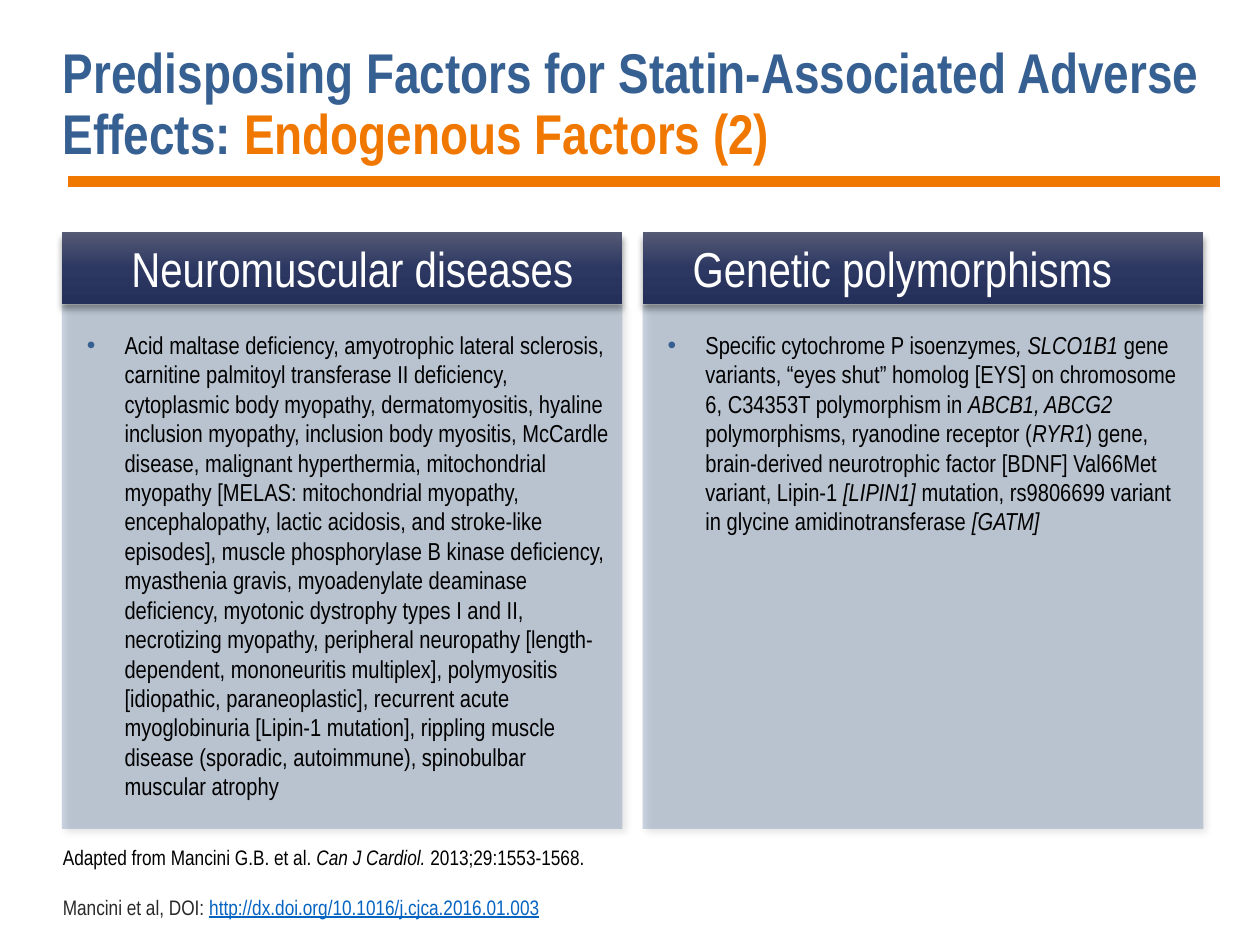
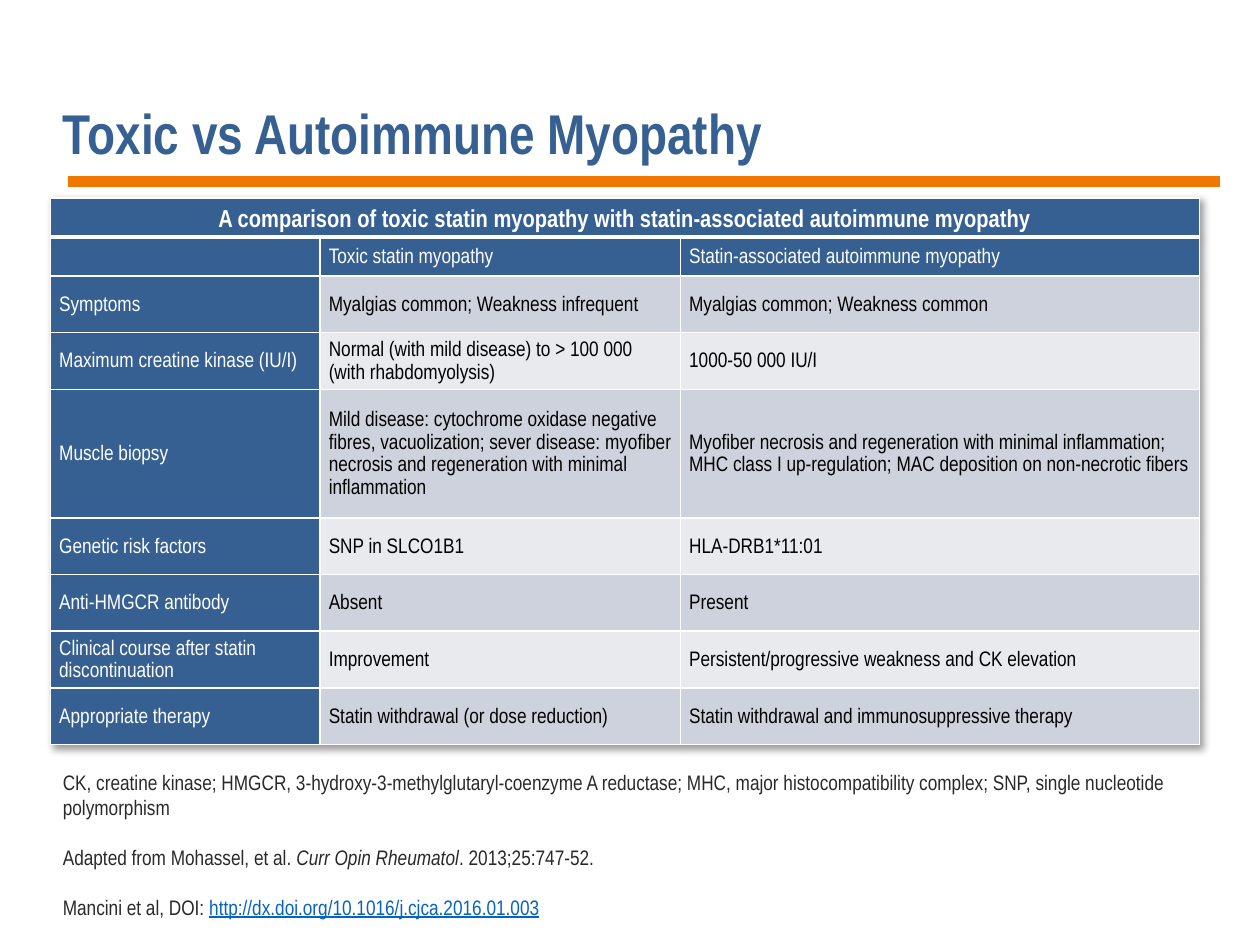
from lxml.etree import SubElement
from pptx import Presentation
from pptx.dml.color import RGBColor
from pptx.enum.shapes import MSO_CONNECTOR, MSO_SHAPE
from pptx.enum.text import MSO_ANCHOR as ANCHOR, MSO_AUTO_SIZE as AUTO_SIZE, PP_ALIGN as ALIGN
from pptx.oxml.ns import qn
from pptx.util import Inches, Pt

FONT = "Arial Narrow"
COLORS = {
    "blue": "376092", "orange": "F17800", "black": "000000", "white": "FFFFFF",
    "gray": "282928", "link": "0563C1", "band_dark": "CED2DC", "band_light": "E8EAEE",
}
HEADER_STOPS = {0: "555A75", 50: "2D3862", 100: "25305A"}
TITLE = {"size": 32, "bold": True, "color": "blue"}
NOTE = {"size": 12, "color": "gray"}
BODY = {"size": 14, "color": "black"}
HEADING = {"size": 28, "color": "white"}
ITALIC = {"italic": True}
DOI_LINE = [("Mancini et al, DOI: ", {}),
            ("http://dx.doi.org/10.1016/j.cjca.2016.01.003",
             {"color": "link", "underline": True})]

COLUMN_SIZE = 4.45, 4.74
COLUMN_TOP = 1.84
HEADER_HEIGHT = 0.57
DISEASES = [(
    "Acid maltase deficiency, amyotrophic lateral sclerosis, carnitine palmitoyl transferase II "
    "deficiency, cytoplasmic body myopathy, dermatomyositis, hyaline inclusion myopathy, "
    "inclusion body myositis, McCardle disease, malignant hyperthermia, mitochondrial myopathy "
    "[MELAS: mitochondrial myopathy, encephalopathy, lactic acidosis, and stroke-like episodes], "
    "muscle phosphorylase B kinase deficiency, myasthenia gravis, myoadenylate deaminase "
    "deficiency, myotonic dystrophy types I and II, necrotizing myopathy, peripheral neuropathy "
    "[length-dependent, mononeuritis multiplex], polymyositis [idiopathic, paraneoplastic], "
    "recurrent acute myoglobinuria [Lipin-1 mutation], rippling muscle disease (sporadic, "
    "autoimmune), spinobulbar muscular atrophy", {})]
POLYMORPHISMS = [
    ("Specific cytochrome P isoenzymes", {}), (", SLCO1B1", ITALIC),
    (" gene variants, “eyes shut” homolog [EYS] on chromosome 6, C34353T polymorphism in ", {}),
    ("ABCB1, ABCG2", ITALIC), (" polymorphisms, ryanodine receptor (", {}), ("RYR1", ITALIC),
    (") gene, brain-derived neurotrophic factor [BDNF] Val66Met variant, Lipin-1 ", {}),
    ("[LIPIN1]", ITALIC),
    (" mutation, rs9806699 variant in glycine amidinotransferase ", {}), ("[GATM]", ITALIC),
]
# left edge, heading, heading box offset and width, text
FACTOR_COLUMNS = [
    (0.49, "Neuromuscular diseases", 0.1, 4.41, DISEASES),
    (5.1, "Genetic polymorphisms ", -0.03, 4.27, POLYMORPHISMS),
]

TABLE_TITLE = "A comparison of toxic statin myopathy with statin-associated autoimmune myopathy"
COLUMN_WIDTHS = [2.14, 2.86, 4.12]
ROW_HEIGHTS = [0.31, 0.31, 0.45, 0.45, 1.02, 0.45, 0.45, 0.45, 0.45]
TABLE_ROWS = [
    (TABLE_TITLE, "", ""),
    ("", "Toxic statin myopathy", "Statin-associated autoimmune myopathy"),
    ("Symptoms", "Myalgias common; Weakness infrequent", "Myalgias common; Weakness common"),
    ("Maximum creatine kinase (IU/I)",
     "Normal (with mild disease) to > 100 000 (with rhabdomyolysis)", "1000-50 000 IU/I"),
    ("Muscle biopsy",
     "Mild disease: cytochrome oxidase negative fibres, vacuolization; sever disease: "
     "myofiber necrosis and regeneration with minimal inflammation",
     "Myofiber necrosis and regeneration with minimal inflammation; MHC class I "
     "up-regulation; MAC deposition on non-necrotic fibers"),
    ("Genetic risk factors", "SNP in SLCO1B1", "HLA-DRB1*11:01"),
    ("Anti-HMGCR antibody", "Absent", "Present"),
    ("Clinical course after statin discontinuation", "Improvement",
     "Persistent/progressive weakness and CK elevation"),
    ("Appropriate therapy", "Statin withdrawal (or dose reduction)",
     "Statin withdrawal and immunosuppressive therapy"),
]


def rgb(name):
    return RGBColor.from_string(COLORS[name])


def add_color(parent, value, alpha=None):
    color = SubElement(parent, qn("a:srgbClr"), val=value)
    if alpha is not None:
        SubElement(color, qn("a:alpha"), val=str(alpha * 1000))


def add_shadow(effects, angle):
    shadow = SubElement(effects, qn("a:outerShdw"), blurRad=str(Pt(4)), dist=str(Pt(3)),
                        dir=str(angle * 60000), algn="tl", rotWithShape="0")
    add_color(shadow, COLORS["black"], 40)


def write_spans(para, spans, base):
    """Add (text, format) spans, each format completing the base one."""
    for text, extra in spans:
        span = para.add_run()
        span.text = text
        values = {**base, **extra}
        span.font.color.rgb = rgb(values.pop("color"))
        values.update(name=FONT, size=Pt(values["size"]))
        for key, value in values.items():
            setattr(span.font, key, value)


def add_text(page, box, paras, base, anchor=ANCHOR.TOP, **para_format):
    shape = page.shapes.add_textbox(*map(Inches, box))
    frame = shape.text_frame
    frame.word_wrap = True
    frame.auto_size = AUTO_SIZE.NONE
    frame.vertical_anchor = anchor
    for index, spans in enumerate(paras):
        para = frame.add_paragraph() if index else frame.paragraphs[0]
        for key, value in para_format.items():
            setattr(para, key, value)
        write_spans(para, spans, base)
    return frame


def add_rectangle(page, box, shadow_angle):
    shape = page.shapes.add_shape(MSO_SHAPE.RECTANGLE, *map(Inches, box))
    shape.line.fill.background()
    shape.shadow.inherit = False
    add_shadow(shape._element.spPr.find(qn("a:effectLst")), shadow_angle)
    return shape


def add_frame(deck, title, notes):
    """Add a page with the title, rule and source notes that all pages share."""
    page = deck.slides.add_slide(deck.slide_layouts[6])
    rule = page.shapes.add_connector(MSO_CONNECTOR.STRAIGHT,
                                     *map(Inches, (0.54, 1.44, 9.68, 1.44)))
    rule.line.color.rgb = rgb("orange")
    rule.line.width = Pt(6)
    SubElement(rule._element.spPr, qn("a:effectLst"))
    add_text(page, (0.4, 0.4, 9.28, 0.97), [title], TITLE, ANCHOR.BOTTOM, line_spacing=0.9)
    frame = add_text(page, (0.4, 6.95, 9.28, 0.4), notes + [DOI_LINE], NOTE, ANCHOR.BOTTOM)
    for para in frame.paragraphs[1:]:
        para.space_before = Pt(14.3)
    return page


def add_panel(page, box):
    panel = add_rectangle(page, box, 45)
    panel.fill.solid()
    panel.fill.fore_color.rgb = rgb("blue")
    color = panel._element.spPr.find(qn("a:solidFill"))[0]
    SubElement(color, qn("a:alpha"), val="25000")


def add_header(page, box):
    header = add_rectangle(page, box, 90)
    header.fill.gradient()
    header.fill.gradient_angle = 270
    stops = header._element.spPr.find(".//" + qn("a:gsLst"))
    for stop in list(stops):
        stops.remove(stop)
    for position, value in HEADER_STOPS.items():
        add_color(SubElement(stops, qn("a:gs"), pos=str(position * 1000)), value)


def add_bullet(para):
    props = para._p.get_or_add_pPr()
    props.set("marL", str(Inches(0.4)))
    props.set("indent", str(Inches(-0.3)))
    add_color(SubElement(props, qn("a:buClr")), COLORS["blue"])
    SubElement(props, qn("a:buFont"), typeface="Arial")
    SubElement(props, qn("a:buChar"), char="•")


def add_factor_column(page, box, heading, offset, heading_width, spans):
    left, top, width, height = box
    body_top = top + HEADER_HEIGHT + 0.01
    add_panel(page, (left, body_top, width, top + height - body_top))
    add_header(page, (left, top, width, HEADER_HEIGHT))
    frame = add_text(page, (left, body_top + 0.15, width, 1.93), [spans], BODY,
                     space_before=Pt(2), space_after=Pt(2))
    add_bullet(frame.paragraphs[0])
    add_text(page, (left + offset, top, heading_width, HEADER_HEIGHT), [[(heading, {})]],
             HEADING, alignment=ALIGN.CENTER)


def set_borders(cell, row):
    props = cell._tc.get_or_add_tcPr()
    thick_side = {0: "lnB", 1: "lnT"}.get(row)
    for index, side in enumerate(("lnL", "lnR", "lnT", "lnB")):
        width = Pt(2.25) if side == thick_side else Pt(1)
        line = SubElement(props, qn(f"a:{side}"), w=str(width))
        add_color(SubElement(line, qn("a:solidFill")), COLORS["white"])
        props.remove(line)
        props.insert(index, line)


def fill_cell(cell, text, row, column):
    is_title, is_label = row == 0, row < 2 or column == 0
    band = "band_light" if row % 2 else "band_dark"
    cell.fill.solid()
    cell.fill.fore_color.rgb = rgb("blue" if is_label else band)
    set_borders(cell, row)
    cell.vertical_anchor = ANCHOR.BOTTOM if is_title else ANCHOR.MIDDLE
    cell.margin_left = cell.margin_right = Inches(0.07)
    cell.margin_top = cell.margin_bottom = Inches(0.03 if is_title else 0)
    para = cell.text_frame.paragraphs[0]
    if not text:
        SubElement(para._p, qn("a:endParaRPr"), sz="1200")
        return
    if is_title:
        para.alignment = ALIGN.CENTER
    else:
        para.line_spacing = Pt(13)
    write_spans(para, [(text, {})], {"size": 14 if is_title else 12, "bold": is_title,
                                     "color": "white" if is_label else "black"})


def add_comparison(page, left, top):
    frame = page.shapes.add_table(len(ROW_HEIGHTS), len(COLUMN_WIDTHS), Inches(left), Inches(top),
                                  Inches(sum(COLUMN_WIDTHS)), Inches(sum(ROW_HEIGHTS)))
    table = frame.table
    for column, width in zip(table.columns, COLUMN_WIDTHS):
        column.width = Inches(width)
    for row, height in zip(table.rows, ROW_HEIGHTS):
        row.height = Inches(height)
    for row, texts in enumerate(TABLE_ROWS):
        for column, text in enumerate(texts):
            fill_cell(table.cell(row, column), text, row, column)
    table.cell(0, 0).merge(table.cell(0, 2))
    props = table._tbl.tblPr
    effects = SubElement(props, qn("a:effectLst"))
    add_shadow(effects, 45)
    props.insert(0, effects)


def build_factors(deck):
    title = [("Predisposing Factors for Statin-Associated Adverse Effects: ", {}),
             ("Endogenous Factors (2)", {"color": "orange"})]
    black = {"color": "black"}
    source = [("Adapted from Mancini G.B. et al. ", black),
              ("Can J Cardiol. ", {**black, **ITALIC}), ("2013;29:1553-1568.", black)]
    page = add_frame(deck, title, [source])
    for left, *content in FACTOR_COLUMNS:
        add_factor_column(page, (left, COLUMN_TOP, *COLUMN_SIZE), *content)


def build_myopathy(deck):
    abbreviations = [("CK, creatine kinase; HMGCR, 3-hydroxy-3-methylglutaryl-coenzyme A reductase; "
                      "MHC, major histocompatibility complex; SNP, single nucleotide polymorphism",
                      {})]
    source = [("Adapted from Mohassel, et al. ", {}), ("Curr Opin Rheumatol", ITALIC),
              (". 2013;25:747-52.", {})]
    page = add_frame(deck, [("Toxic vs Autoimmune Myopathy", {})], [abbreviations, source])
    add_comparison(page, 0.4, 1.57)


def main():
    deck = Presentation()
    deck.slide_width, deck.slide_height = Inches(10), Inches(7.5)
    build_factors(deck)
    build_myopathy(deck)
    deck.save("out.pptx")


if __name__ == "__main__":
    main()
